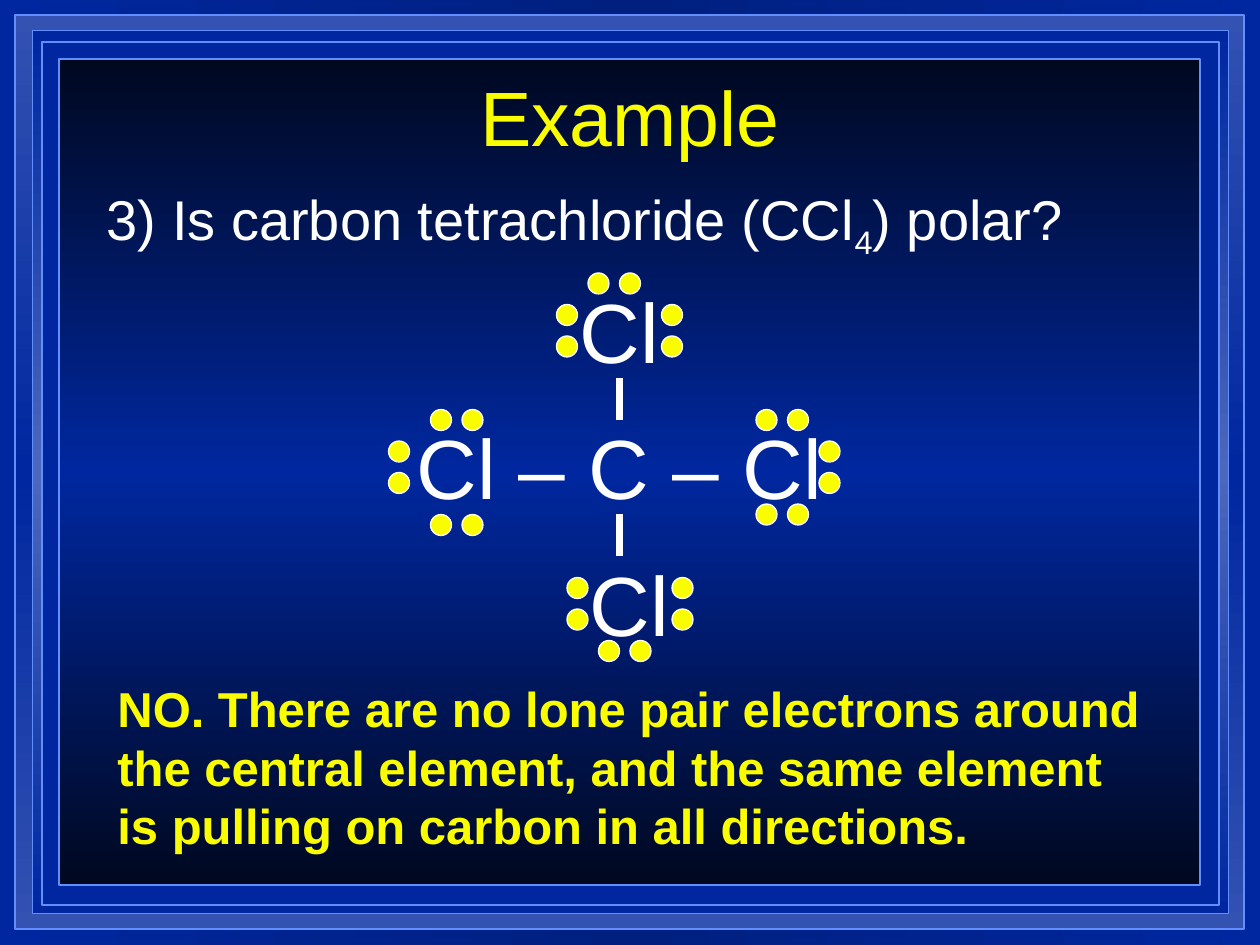
from pptx import Presentation
from pptx.dml.color import RGBColor
from pptx.enum import shapes, text
from pptx.oxml import ns
from pptx.util import Pt
from lxml import etree

PX = 914400 // 120  # one px in EMU
FONT = "Arial"
COLORS = {
    "blue": "00279F",
    "deep": "001F7F",
    "night": "000820",
    "bevel": "3352B2",
    "glow": "4C67BC",
    "edge": "618FFD",
    "yellow": "FAFD00",
    "white": "FFFFFF",
}
DOT, STEP = 20, 30  # electron size and distance within a pair


def color(name):
    return RGBColor.from_string(COLORS[name])


def scaled(*lengths):
    return [length * PX for length in lengths]


def fill_gradient(fill, element, outer, middle, angle):
    """Fill with a gradient that runs outer, middle, outer."""
    fill.gradient()
    fill.gradient_angle = (360 - angle) % 360
    stops = next(element.iter(ns.qn("a:gsLst")))
    stops.clear()
    for percent, name in ((0, outer), (50, middle), (100, outer)):
        stop = etree.SubElement(stops, ns.qn("a:gs"), pos=str(percent * 1000))
        etree.SubElement(stop, ns.qn("a:srgbClr"), val=COLORS[name])


def add_preset(page, kind, box, line, width):
    shape = page.shapes.add_shape(kind, *scaled(*box))
    shape.shadow.inherit = False
    shape.line.color.rgb = color(line)
    shape.line.width = Pt(width)
    return shape


def style(para, size, name, bold=False, align=text.PP_ALIGN.LEFT):
    para.alignment = align
    para.font.name = FONT
    para.font.size = Pt(size)
    para.font.bold = bold
    para.font.color.rgb = color(name)


def add_text(page, box, words, size, name, **options):
    frame = page.shapes.add_textbox(*scaled(*box)).text_frame
    frame.word_wrap = True
    para = frame.paragraphs[0]
    para.add_run().text = words
    style(para, size, name, **options)
    return para


def add_frames(page):
    """Nested bevelled frames behind the content."""
    fill_gradient(page.background.fill, page.background._cSld, "blue", "deep", 0)
    frames = [
        ((14, 14, 1171, 871), "bevel", "blue"),
        ((31, 29, 1139, 841), "blue", "glow"),
        ((40, 40, 1121, 822), "blue", None),
        ((56, 56, 1087, 787), "night", "blue"),
    ]
    for box, outer, middle in frames:
        frame = add_preset(page, shapes.MSO_SHAPE.RECTANGLE, box, "edge", 1)
        if middle:
            fill_gradient(frame.fill, frame._element, outer, middle, 90)
        else:
            frame.fill.solid()
            frame.fill.fore_color.rgb = color(outer)


def add_title(page, box, words):
    title = page.shapes.title
    title.left, title.top, title.width, title.height = scaled(*box)
    frame = title.text_frame
    frame.text = words
    frame.auto_size = text.MSO_AUTO_SIZE.NONE
    frame.vertical_anchor = text.MSO_ANCHOR.MIDDLE
    style(frame.paragraphs[0], 44, "yellow", align=text.PP_ALIGN.CENTER)
    page.shapes._spTree.append(title._element)  # bring in front of the frames


def add_question(page, box):
    para = add_text(page, box, "3) Is carbon tetrachloride (CCl", 32, "white")
    subscript = para.add_run()
    subscript.text = "4"
    subscript.font._element.set("baseline", "-25000")
    para.add_run().text = ") polar?"


def add_bond(page, x, y, length):
    bond = page.shapes.add_connector(
        shapes.MSO_CONNECTOR.STRAIGHT, *scaled(x, y, x, y + length))
    bond.line.color.rgb = color("white")
    bond.line.width = Pt(4.5)
    etree.SubElement(bond._element.spPr, ns.qn("a:effectLst"))


def add_pair(page, x, y, dx, dy):
    """Lone pair: two electrons, the second one offset by dx, dy."""
    for left, top in ((x, y), (x + dx, y + dy)):
        dot = add_preset(page, shapes.MSO_SHAPE.OVAL, (left, top, DOT, DOT), "white", 0.75)
        dot.fill.solid()
        dot.fill.fore_color.rgb = color("yellow")


def add_molecule(page, box):
    left, top, width, _ = box
    # Atoms and bonds
    add_text(page, (left, top + 130, width, 108), "Cl – C – Cl", 48, "white",
             align=text.PP_ALIGN.CENTER)
    for x, y in ((250, 0), (260, 260)):
        add_text(page, (left + x, top + y, 150, 108), "Cl", 48, "white")
    for y in (100, 230):
        add_bond(page, left + 300, top + y, 40)
    # Lone pairs around the top, left, right and bottom chlorine
    upright = [(240, 30), (340, 30), (80, 160), (490, 160), (250, 290), (350, 290)]
    level = [(270, 0), (120, 130), (120, 230), (430, 130), (430, 220), (280, 350)]
    for pairs, dx, dy in ((upright, 0, STEP), (level, STEP, 0)):
        for x, y in pairs:
            add_pair(page, left + x, top + y, dx, dy)


def main():
    deck = Presentation()
    deck.slide_width, deck.slide_height = scaled(1200, 900)
    page = deck.slides.add_slide(deck.slide_layouts[5])
    add_frames(page)
    add_title(page, (90, 60, 1020, 100), "Example")
    add_question(page, (90, 170, 1010, 190))
    add_text(page, (100, 640, 1000, 180),
             "NO. There are no lone pair electrons around the central element, "
             "and the same element is pulling on carbon in all directions.",
             28, "yellow", bold=True)
    add_molecule(page, (290, 260, 600, 370))
    deck.save("out.pptx")


if __name__ == "__main__":
    main()
